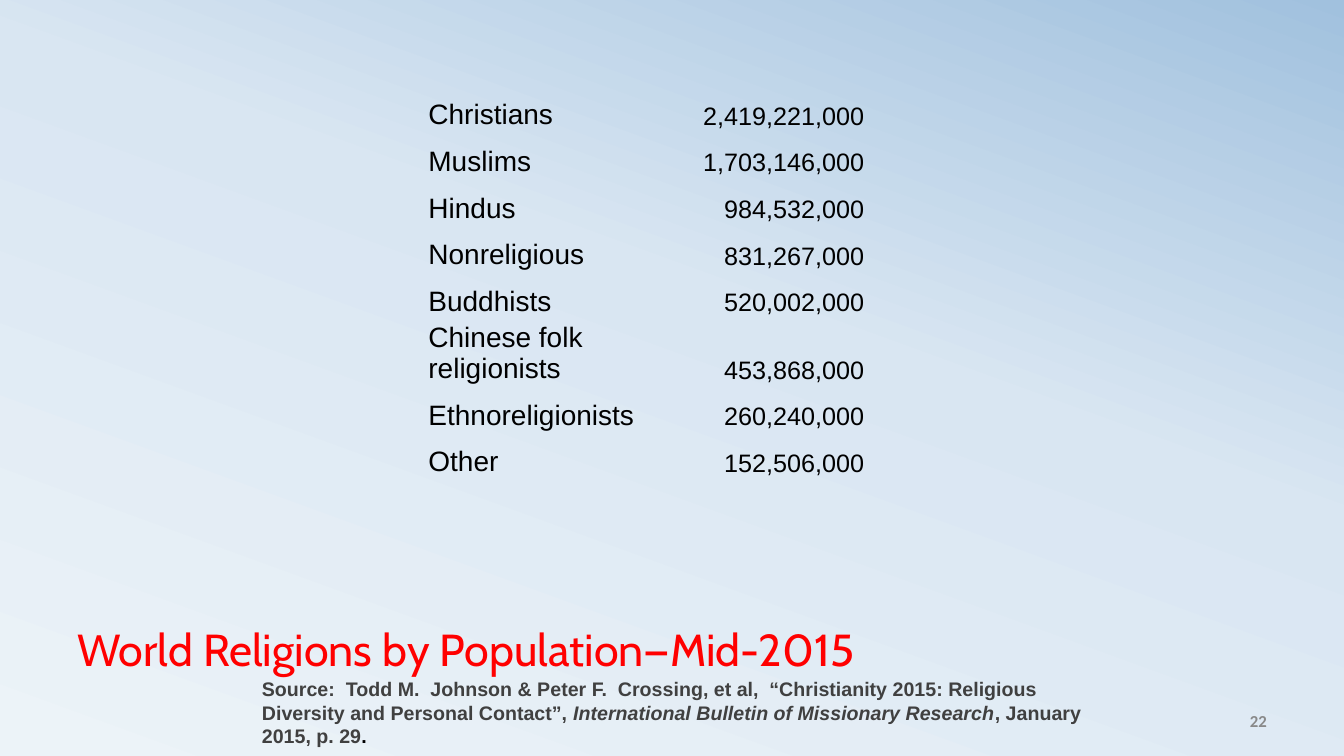
"""Build a slide that lists world religions by population in mid-2015."""
from copy import deepcopy
from dataclasses import dataclass

from pptx import Presentation
from pptx.dml.color import RGBColor
from pptx.enum.text import MSO_ANCHOR as Anchor, PP_ALIGN as Align
from pptx.util import Emu, Pt


@dataclass(frozen=True)
class Theme:
    background: tuple = ((0, "ECF3F8"), (0.58, "D9E6F2"), (1, "A1C1DE"))
    background_angle: int = 70
    title: str = "FF0000"
    ink: str = "000000"
    source: str = "404040"
    number: str = "898989"
    title_size: int = 32
    name_size: int = 20
    count_size: int = 18
    source_size: int = 14
    number_size: int = 12
    title_font: str = "Cabin"
    body_font: str = "Arial"
    number_font: str = "Calibri"


THEME = Theme()
PX_PER_INCH = 216
NO_TABLE_STYLE = "{2D5ABB26-0587-4C30-8999-92F81FD0307C}"
RELIGIONS = [
    ("Christians", "2,419,221,000"),
    ("Muslims", "1,703,146,000"),
    ("Hindus", "984,532,000"),
    ("Nonreligious", "831,267,000"),
    ("Buddhists", "520,002,000"),
    ("Chinese folk religionists", "453,868,000"),
    ("Ethnoreligionists", "260,240,000"),
    ("Other", "152,506,000"),
]
ROW_HEIGHT, TALL_ROW_HEIGHT, TALL_ROW = 100, 144, 5


def px(*lengths):
    return [Emu(round(length * 914400 / PX_PER_INCH)) for length in lengths]


def write(paragraph, text, size, font=THEME.body_font, color=THEME.ink,
          bold=False, italic=False, align=Align.LEFT):
    paragraph.alignment = align
    run = paragraph.add_run()
    run.text = text
    run.font.size = Pt(size)
    run.font.name = font
    run.font.bold = bold
    run.font.italic = italic
    run.font.color.rgb = RGBColor.from_string(color)


presentation = Presentation()
presentation.slide_width, presentation.slide_height = px(2880, 1620)
slide = presentation.slides.add_slide(presentation.slide_layouts[6])

fill = slide.background.fill
fill.gradient()
fill.gradient_angle = THEME.background_angle
stop_list = slide.element.xpath(".//a:gsLst")[0]
stop_list.append(deepcopy(stop_list[-1]))
for stop, (position, color) in zip(fill.gradient_stops, THEME.background):
    stop.position = position
    stop.color.rgb = RGBColor.from_string(color)

paragraphs = []
for box, anchor in [
    ((144, 1206, 2592, 252), Anchor.BOTTOM),
    ((2064, 1501, 672, 86), Anchor.MIDDLE),
    ((540, 1440, 1890, 123), Anchor.TOP),
]:
    frame = slide.shapes.add_textbox(*px(*box)).text_frame
    frame.word_wrap = True
    frame.vertical_anchor = anchor
    paragraphs.append(frame.paragraphs[0])
title, number, source = paragraphs

title.line_spacing = 0.8
write(title, "World Religions by Population—Mid-2015", THEME.title_size,
      font=THEME.title_font, color=THEME.title)
write(number, "22", THEME.number_size, font=THEME.number_font,
      color=THEME.number, bold=True, align=Align.RIGHT)
for text, color, italic in [
    ("Source:  Todd M.  Johnson & Peter F.  Crossing, et al,  “Christianity 2015: "
     "Religious Diversity and Personal Contact”, ", THEME.source, False),
    ("International Bulletin of Missionary Research", THEME.source, True),
    (", January 2015, p. 29", THEME.source, False),
    (".", THEME.ink, False),
]:
    write(source, text, THEME.source_size, color=color, bold=True, italic=italic)

graphic = slide.shapes.add_table(len(RELIGIONS) + 1, 2, *px(918, 180, 936, 944))
table = graphic.table
table.first_row = table.horz_banding = False
graphic.element.xpath(".//a:tableStyleId")[0].text = NO_TABLE_STYLE
for column, width in zip(table.columns, px(576, 360)):
    column.width = width
for index, row in enumerate(table.rows):
    row.height, = px(TALL_ROW_HEIGHT if index == TALL_ROW else ROW_HEIGHT)
for cell in table.iter_cells():
    cell.fill.background()

for row, (religion, count) in zip(table.rows, RELIGIONS):
    for cell, text, size, align, inset in zip(
            row.cells, (religion, count), (THEME.name_size, THEME.count_size),
            (Align.LEFT, Align.RIGHT), px(0, 2)):
        cell.vertical_anchor = Anchor.BOTTOM
        cell.margin_left = cell.margin_right = cell.margin_top = inset
        cell.margin_bottom = 0
        write(cell.text_frame.paragraphs[0], text, size, align=align)

presentation.save("out.pptx")
